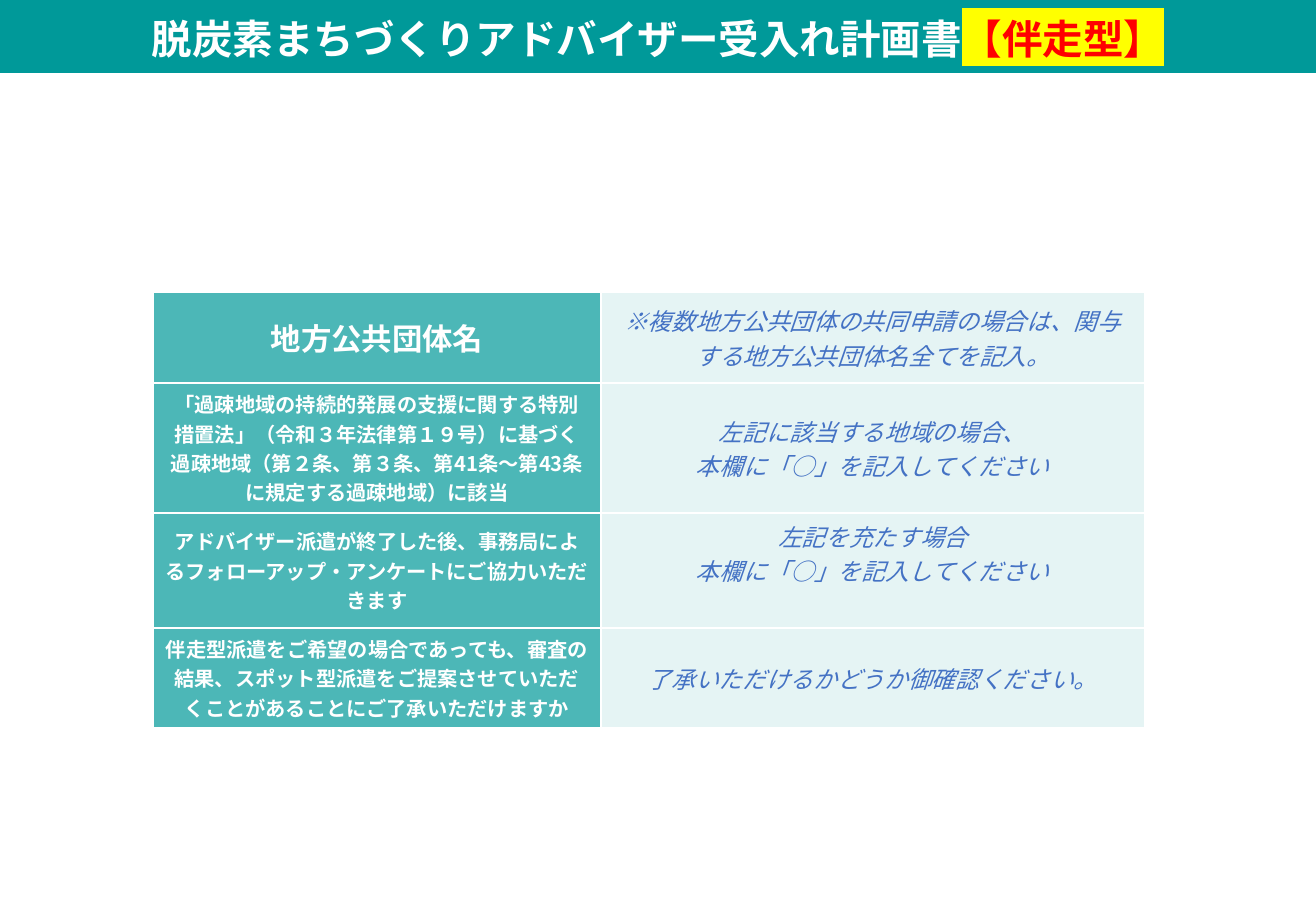
from lxml.etree import SubElement
from pptx import Presentation
from pptx.dml.color import RGBColor
from pptx.enum.lang import MSO_LANGUAGE_ID
from pptx.enum.shapes import MSO_SHAPE
from pptx.enum.text import MSO_ANCHOR, PP_ALIGN
from pptx.oxml import parse_xml
from pptx.oxml.ns import nsdecls, qn
from pptx.util import Pt

EMU_PER_PX = 7526
COLORS = {"teal": "009999", "white": "FFFFFF", "blue": "4472C4", "red": "FF0000", "yellow": "FFFF00"}
JAPANESE_FONT = "Noto Sans CJK JP"
TITLE = {"size": Pt(24), "name": JAPANESE_FONT, "bold": True, "color": "white"}
TAG = {**TITLE, "color": "red", "highlight": "yellow"}
HEADING = {**TITLE, "size": Pt(18)}
LABEL = {**TITLE, "size": Pt(12)}
GUIDANCE = {"size": Pt(14), "name": "Arial", "bold": False, "italic": True, "color": "blue"}

COLUMN_WIDTHS = [448, 544]
COLUMN_OPACITIES = [70, 10]
ROWS = [
    (91, HEADING, "地方公共団体名",
     ["※複数地方公共団体の共同申請の場合は、関与する地方公共団体名全てを記入。"], 6),
    (130, LABEL, "「過疎地域の持続的発展の支援に関する特別措置法」（令和３年法律第１９号）に基づく過疎地域（第２条、第３条、第41条～第43条に規定する過疎地域）に該当",
     ["左記に該当する地域の場合、", "本欄に「○」を記入してください"], 6),
    (115, LABEL, "アドバイザー派遣が終了した後、事務局によるフォローアップ・アンケートにご協力いただきます",
     ["左記を充たす場合", "本欄に「○」を記入してください"], 40),
    (100, LABEL, "伴走型派遣をご希望の場合であっても、審査の結果、スポット型派遣をご提案させていただくことがあることにご了承いただけますか",
     ["了承いただけるかどうか御確認ください。"], 6),
]


def px(value):
    return value * EMU_PER_PX


class SlideBuilder:
    def __init__(self, presentation):
        self.colors = COLORS
        self.slide = presentation.slides.add_slide(presentation.slide_layouts[6])

    def rgb(self, name):
        return RGBColor.from_string(self.colors[name])

    def run(self, paragraph, text, style):
        run = paragraph.add_run()
        run.text = text
        font = run.font
        font.language_id = MSO_LANGUAGE_ID.JAPANESE
        for attribute, value in style.items():
            if attribute not in ("color", "highlight"):
                setattr(font, attribute, value)
        font.color.rgb = self.rgb(style["color"])
        properties = run._r.get_or_add_rPr()
        latin = properties.find(qn("a:latin"))
        if "highlight" in style:
            latin.addprevious(parse_xml(
                f'<a:highlight {nsdecls("a")}><a:srgbClr val="{self.colors[style["highlight"]]}"/></a:highlight>'))
        latin.addnext(parse_xml(f'<a:ea {nsdecls("a")} typeface="{JAPANESE_FONT}"/>'))

    def banner(self, width, height, pieces):
        shape = self.slide.shapes.add_shape(MSO_SHAPE.RECTANGLE, 0, 0, px(width), px(height))
        shape.shadow.inherit = False
        shape.fill.solid()
        shape.fill.fore_color.rgb = self.rgb("teal")
        shape.line.fill.background()
        frame = shape.text_frame
        format_values = {"word_wrap": True, "vertical_anchor": MSO_ANCHOR.MIDDLE, "margin_left": px(10),
                         "margin_top": px(15), "margin_right": px(10), "margin_bottom": px(5)}
        for attribute, value in format_values.items():
            setattr(frame, attribute, value)
        paragraph = frame.paragraphs[0]
        paragraph.alignment = PP_ALIGN.CENTER
        paragraph.line_spacing = 0.9
        for text, style in pieces:
            self.run(paragraph, text, style)

    def cell(self, cell, lines, style, opacity, bottom):
        format_values = {"vertical_anchor": MSO_ANCHOR.MIDDLE, "margin_left": px(12), "margin_right": px(12),
                         "margin_top": px(6), "margin_bottom": px(bottom)}
        for attribute, value in format_values.items():
            setattr(cell, attribute, value)
        cell.fill.solid()
        cell.fill.fore_color.rgb = self.rgb("teal")
        properties = cell._tc.get_or_add_tcPr()
        color = properties.find(f'{qn("a:solidFill")}/{qn("a:srgbClr")}')
        SubElement(color, qn("a:alpha"), val=str(opacity * 1000))
        for index, side in enumerate("LRTB"):
            properties.insert(index, parse_xml(
                f'<a:ln{side} {nsdecls("a")} w="{Pt(1)}"><a:solidFill>'
                f'<a:srgbClr val="{self.colors["white"]}"/></a:solidFill></a:ln{side}>'))
        frame = cell.text_frame
        for index, line in enumerate(lines):
            paragraph = frame.add_paragraph() if index else frame.paragraphs[0]
            paragraph.alignment = PP_ALIGN.CENTER
            self.run(paragraph, line, style)

    def table(self, left, top, widths, opacities, rows):
        height = sum(row[0] for row in rows)
        table = self.slide.shapes.add_table(
            len(rows), len(widths), px(left), px(top), px(sum(widths)), px(height)).table
        table.first_row = False
        table.horz_banding = False
        for column, width in zip(table.columns, widths):
            column.width = px(width)
        for index, (row_height, label_style, label, guidance, bottom) in enumerate(rows):
            table.rows[index].height = px(row_height)
            self.cell(table.cell(index, 0), [label], label_style, opacities[0], 6)
            self.cell(table.cell(index, 1), guidance, GUIDANCE, opacities[1], bottom)


def main():
    presentation = Presentation()
    presentation.slide_width = px(1316)
    presentation.slide_height = px(911)
    builder = SlideBuilder(presentation)
    builder.banner(1316, 73, [("脱炭素まちづくりアドバイザー受入れ計画書", TITLE), ("【伴走型】", TAG)])
    builder.table(153, 292, COLUMN_WIDTHS, COLUMN_OPACITIES, ROWS)
    presentation.save("out.pptx")


if __name__ == "__main__":
    main()
